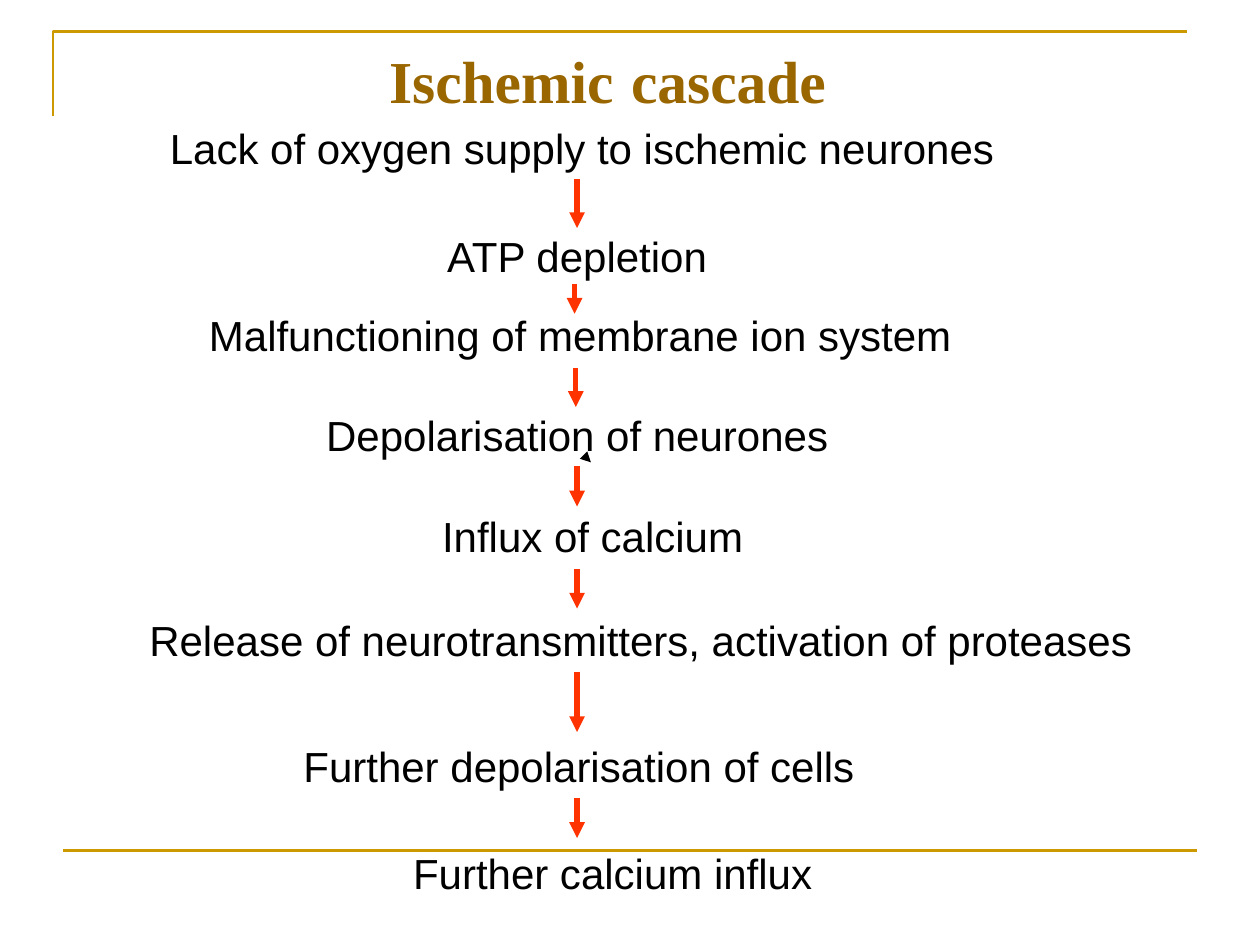
"""Build the ischemic cascade slide."""
from typing import NamedTuple

from lxml.etree import SubElement
from pptx import Presentation
from pptx.dml.color import RGBColor
from pptx.enum.shapes import MSO_CONNECTOR
from pptx.enum.text import MSO_AUTO_SIZE, PP_ALIGN
from pptx.oxml.ns import qn
from pptx.util import Inches, Pt

GOLD, BROWN, BLACK, RED = "CC9900", "996600", "000000", "FF3300"


class Box(NamedTuple):
    left: float
    top: float
    width: float
    height: float = 0.5


class Run(NamedTuple):
    text: str
    size: float = 24
    font: str = "Arial"
    color: str = BLACK
    bold: bool = False


class Step(NamedTuple):
    text: str
    box: Box
    align: PP_ALIGN = PP_ALIGN.LEFT


class Arrow(NamedTuple):
    start: tuple[float, float]
    end: tuple[float, float]
    color: str = RED
    weight: float = 3


TITLE_BOX = Box(2.99, 0.27, 3.76, 0.7)
TITLE = [
    Run("Ischemic", 34, "Times New Roman", BROWN, True),
    Run(" ", 36, bold=True),
    Run("cascade", 34, "Times New Roman", BROWN, True),
]
STEPS = [
    Step("Lack of oxygen supply to ischemic neurones", Box(1.25, 0.92, 6.75)),
    Step("ATP depletion", Box(3.45, 1.78, 2.3)),
    Step("Malfunctioning of membrane ion system", Box(1.56, 2.41, 6.1)),
    Step("Depolarisation of neurones", Box(2.49, 3.2, 4.19)),
    Step("Influx of calcium", Box(3.41, 4, 2.59)),
    Step("Release of neurotransmitters, activation of proteases",
         Box(1.08, 4.83, 8.01), PP_ALIGN.CENTER),
    Step("Further depolarisation of cells", Box(2.31, 5.83, 4.58)),
    Step("Further calcium influx", Box(3.18, 6.68, 3.37)),
]
ARROWS = [Arrow((4.68, 3.66), (4.69, 3.67), BLACK, 0.75)] + [
    Arrow((x, top), (x, bottom))
    for x, top, bottom in [
        (4.58, 1.42, 1.81), (4.56, 2.25, 2.49), (4.57, 2.92, 3.23),
        (4.58, 3.7, 4.02), (4.58, 4.52, 4.83), (4.58, 5.33, 5.81),
        (4.58, 6.33, 6.65),
    ]
]


def rgb(value: str) -> RGBColor:
    """Turn a hex string into a colour."""
    return RGBColor.from_string(value)


def apply(target, formats: dict) -> None:
    """Set each named attribute on the target."""
    for name, value in formats.items():
        setattr(target, name, value)


def style_line(line, color: str, weight: float) -> None:
    """Give a line its colour and weight."""
    line.color.rgb = rgb(color)
    line.width = Pt(weight)


def add_text(slide, box: Box, runs: list[Run], align: PP_ALIGN = PP_ALIGN.LEFT) -> None:
    """Add a one-line text box that fits its text."""
    frame = slide.shapes.add_textbox(*map(Inches, box)).text_frame
    apply(frame, {"word_wrap": False, "auto_size": MSO_AUTO_SIZE.SHAPE_TO_FIT_TEXT})
    paragraph = frame.paragraphs[0]
    paragraph.alignment = align
    for part in runs:
        run = paragraph.add_run()
        run.text = part.text
        apply(run.font, {"size": Pt(part.size), "name": part.font, "bold": part.bold})
        run.font.color.rgb = rgb(part.color)


def add_line(slide, stroke: Arrow, head: bool = True) -> None:
    """Add a straight line, with an arrowhead at its end if asked."""
    connector = slide.shapes.add_connector(
        MSO_CONNECTOR.STRAIGHT, *map(Inches, stroke.start + stroke.end))
    style_line(connector.line, stroke.color, stroke.weight)
    if head:
        SubElement(connector.line._get_or_add_ln(), qn("a:tailEnd"), type="triangle")
    SubElement(connector._element.spPr, qn("a:effectLst"))


def add_frame(slide) -> None:
    """Add the gold corner at the top and the rule at the bottom."""
    builder = slide.shapes.build_freeform(Inches(0.42), Inches(0.92))
    corner = [(Inches(0.42), Inches(0.25)), (Inches(9.42), Inches(0.25))]
    builder.add_line_segments(corner, close=False)
    shape = builder.convert_to_shape()
    shape.shadow.inherit = False
    shape.fill.background()
    style_line(shape.line, GOLD, 1.5)
    add_line(slide, Arrow((0.5, 6.75), (9.5, 6.75), GOLD, 1.5), head=False)


def main() -> None:
    """Draw the slide and save it."""
    deck = Presentation()
    apply(deck, {"slide_width": Inches(10), "slide_height": Inches(7.5)})
    slide = deck.slides.add_slide(deck.slide_layouts[6])
    add_frame(slide)
    add_text(slide, TITLE_BOX, TITLE)
    for step in STEPS:
        add_text(slide, step.box, [Run(step.text)], step.align)
    for arrow in ARROWS:
        add_line(slide, arrow)
    deck.save("out.pptx")


if __name__ == "__main__":
    main()
